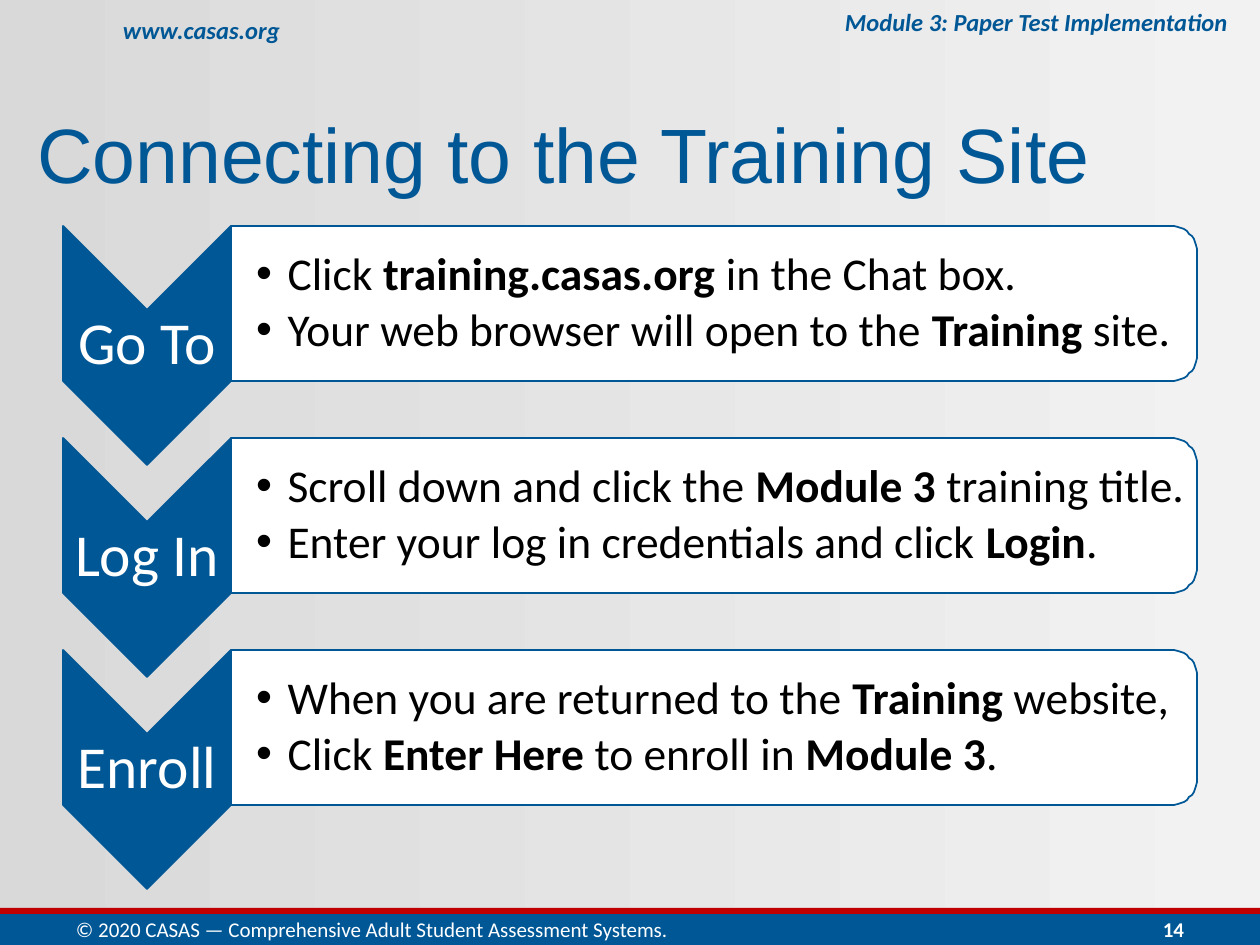
from dataclasses import dataclass
from math import cos, pi, sin

from lxml.etree import SubElement
from pptx import Presentation
from pptx.dml.color import RGBColor
from pptx.enum.shapes import MSO_SHAPE
from pptx.enum.text import MSO_ANCHOR, PP_ALIGN
from pptx.oxml.ns import qn
from pptx.util import Emu, Inches, Pt

SCALE = 914400 / 126


def px(n):
    """Turn px into EMU."""
    return Emu(round(n * SCALE))


@dataclass(frozen=True)
class Theme:
    """Colours, fonts and type sizes."""
    blue: str = "005796"
    red: str = "C00000"
    white: str = "FFFFFF"
    black: str = "000000"
    bg_light: str = "F2F2F2"
    bg_dark: str = "D9D9D9"
    head_font: str = "Arial"
    body_font: str = "Calibri"
    title: int = 44
    step: int = 34
    body: int = 26
    header: int = 14
    footer: int = 12


class Deck:
    """Holds the style and the current slide."""

    def __init__(self, theme):
        """Open a 4:3 deck with one title slide."""
        self.t = theme
        self.prs = Presentation()
        self.prs.slide_width, self.prs.slide_height = Inches(10), Inches(7.5)
        self.s = self.prs.slides.add_slide(self.prs.slide_layouts[5])

    def background(self):
        """Shade the slide from right to left."""
        fill = self.s.background.fill
        fill.gradient()
        fill.gradient_angle = 180
        for stop, color in zip(fill.gradient_stops, (self.t.bg_light, self.t.bg_dark)):
            stop.color.rgb = RGBColor.from_string(color)

    def run(self, p, text, size, color, bold=False, italic=False, font=None):
        """Add one formatted run."""
        r = p.add_run()
        r.text = text
        r.font.name = font or self.t.body_font
        r.font.size = Pt(size)
        r.font.bold, r.font.italic = bold, italic
        r.font.color.rgb = RGBColor.from_string(color)

    def frame(self, sp, insets):
        """Prepare a wrapped, middle-anchored text frame."""
        tf = sp.text_frame
        tf.word_wrap = True
        tf.vertical_anchor = MSO_ANCHOR.MIDDLE
        (tf.margin_left, tf.margin_top,
         tf.margin_right, tf.margin_bottom) = map(px, insets)
        return tf

    def title(self, text, x, y, w, h):
        """Place and fill the title placeholder."""
        sp = self.s.shapes.title
        sp.left, sp.top, sp.width, sp.height = map(px, (x, y, w, h))
        p = self.frame(sp, (13, 6, 13, 6)).paragraphs[0]
        p.alignment = PP_ALIGN.LEFT
        self.run(p, text, self.t.title, self.t.blue, font=self.t.head_font)

    def label(self, text, x, y, w, h, size, color, align=PP_ALIGN.LEFT, **style):
        """Add a one-line text box."""
        sp = self.s.shapes.add_textbox(*map(px, (x, y, w, h)))
        p = self.frame(sp, (13, 6, 13, 6)).paragraphs[0]
        p.alignment = align
        self.run(p, text, size, color, **style)

    def bar(self, y, h, color):
        """Add a full-width bar."""
        sp = self.s.shapes.add_shape(MSO_SHAPE.RECTANGLE, 0, px(y), self.prs.slide_width, px(h))
        sp.shadow.inherit = False
        sp.fill.solid()
        sp.fill.fore_color.rgb = RGBColor.from_string(color)
        sp.line.fill.background()

    def outline(self, points, fill):
        """Draw a closed polygon edged in blue."""
        fb = self.s.shapes.build_freeform(*points[0], scale=SCALE)
        fb.add_line_segments(points[1:], close=True)
        sp = fb.convert_to_shape()
        sp.shadow.inherit = False
        sp.fill.solid()
        sp.fill.fore_color.rgb = RGBColor.from_string(fill)
        sp.line.color.rgb = RGBColor.from_string(self.t.blue)
        sp.line.width = Pt(1)
        return sp

    def chevron(self, text, x, y, w, h, notch):
        """Add a downward chevron with its step name."""
        mid, right, low = x + w // 2, x + w, y + h - notch
        sp = self.outline([(right, y), (right, low), (mid, y + h),
                           (x, low), (x, y), (mid, y + notch)], self.t.blue)
        p = self.frame(sp, (3, 87, 3, 87)).paragraphs[0]
        p.alignment = PP_ALIGN.CENTER
        p.line_spacing = 0.9
        self.run(p, text, self.t.step, self.t.white)

    def panel(self, lines, x, y, w, h, radius=26):
        """Add a panel rounded on its right side, with bullets."""
        right = x + w - radius
        arcs = [(right + radius * cos(a), cy + radius * sin(a))
                for cy, start in ((y + radius, -pi / 2), (y + h - radius, 0))
                for a in (start + i * pi / 24 for i in range(13))]
        sp = self.outline([(x, y), *arcs, (x, y + h)], self.t.white)
        tf = self.frame(sp, (25, 10, 10, 10))
        for i, line in enumerate(lines):
            p = tf.add_paragraph() if i else tf.paragraphs[0]
            p.alignment = PP_ALIGN.LEFT
            p.line_spacing = 0.9
            p.space_after = Pt(4)
            self.bullet(p)
            for j, text in enumerate(line):
                self.run(p, text, self.t.body, self.t.black, bold=j % 2 == 1)

    def bullet(self, p):
        """Give a paragraph a hanging bullet."""
        pPr = p._p.get_or_add_pPr()
        indent = Inches(0.25)
        pPr.set("marL", str(indent))
        pPr.set("indent", str(-indent))
        SubElement(pPr, qn("a:buFont"), typeface="Arial")
        SubElement(pPr, qn("a:buChar"), char="•")


STEPS = [
    ("Go To", [("Click ", "training.casas.org", " in the Chat box."),
               ("Your web browser will open to the ", "Training", " site.")]),
    ("Log In", [("Scroll down and click the ", "Module 3 ", "training title."),
                ("Enter your log in credentials and click ", "Login", ".")]),
    ("Enroll", [("When you are returned to the ", "Training", " website,"),
                ("Click ", "Enter Here", " to enroll in ", "Module 3", ".")]),
]


def main():
    """Build and save the slide."""
    t = Theme()
    d = Deck(t)
    d.background()
    d.label("www.casas.org", 110, 8, 586, 43, t.header, t.blue, bold=True, italic=True)
    d.bar(914, 31, t.blue)
    d.bar(908, 6, t.red)
    d.label("Module 3: Paper Test Implementation", 344, 0, 897, 43, t.header, t.blue,
            PP_ALIGN.RIGHT, bold=True, italic=True)
    for i, (name, lines) in enumerate(STEPS):
        y = 226 + 212 * i
        d.chevron(name, 63, y, 168, 239, 84)
        d.panel(lines, 231, y, 966, 155)
    d.title("Connecting to the Training Site", 24, 79, 1217, 147)
    d.label("© 2020 CASAS — Comprehensive Adult Student Assessment Systems.",
            63, 914, 620, 31, t.footer, t.white)
    d.label("14", 1092, 914, 105, 31, t.footer, t.white, PP_ALIGN.RIGHT, bold=True)
    d.prs.save("out.pptx")


if __name__ == "__main__":
    main()
